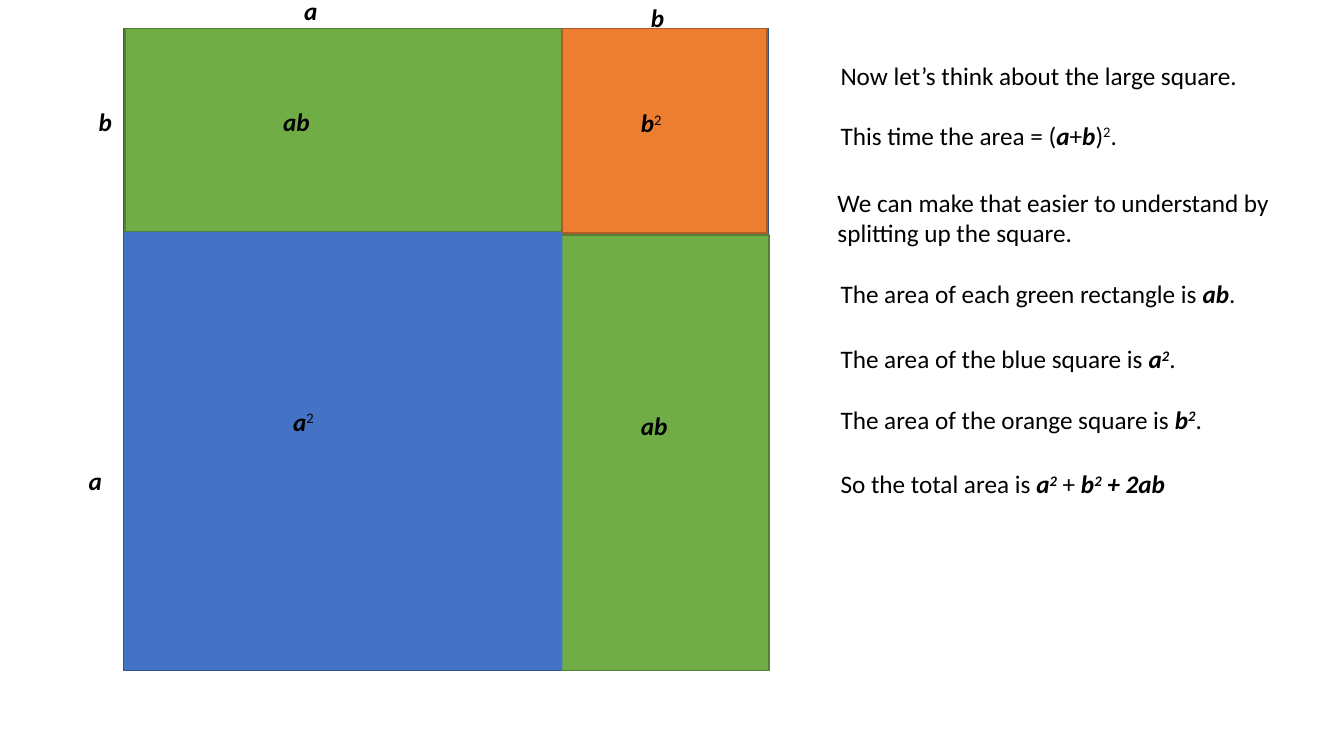
"""Build a slide that splits the square of side a + b into four parts."""
from pptx import Presentation
from pptx.dml.color import RGBColor
from pptx.enum.shapes import MSO_SHAPE
from pptx.util import Pt

BLACK = RGBColor(0x00, 0x00, 0x00)
BLUE = RGBColor(0x44, 0x72, 0xC4)
DARK_BLUE = RGBColor(0x32, 0x54, 0x91)
GREEN = RGBColor(0x70, 0xAD, 0x47)
DARK_GREEN = RGBColor(0x53, 0x80, 0x35)
ORANGE = RGBColor(0xED, 0x7D, 0x31)
DARK_ORANGE = RGBColor(0xAF, 0x5C, 0x24)

PLAIN, STRONG, POWER, STRONG_POWER = "plain", "strong", "power", "strong power"
A, B, AB = ("a", STRONG), ("b", STRONG), ("ab", STRONG)
SQUARED, STRONG_SQUARED = ("2", POWER), ("2", STRONG_POWER)
STOP = (".", PLAIN)

AREAS = [
    (88.6, 20.2, 460.4, 458.6, BLUE, DARK_BLUE),
    (89.3, 20.2, 311.8, 145.4, GREEN, DARK_GREEN),
    (401, 167.8, 148.3, 311, GREEN, DARK_GREEN),
    (401.8, 20.2, 146.2, 146.2, ORANGE, DARK_ORANGE),
    (88.6, 165.6, 313.2, 312.5, BLUE, None),
]

SIDE_WIDTH, AREA_WIDTH, SENTENCE_WIDTH = 50.4, 90, 345
SIDE_LABELS = [
    (210.2, -7.2, [A]),
    (457.9, -2.2, [B]),
    (63.4, 72.7, [B]),
    (56.2, 329, [A]),
]
AREA_LABELS = [
    (195.1, 72.7, [AB]),
    (450.7, 289.4, [AB]),
    (450.7, 73.4, [B, SQUARED]),
    (202.3, 286.6, [A, SQUARED]),
]
SENTENCES = [
    (593.3, 39.6, [("Now let’s think about the large square.", PLAIN)]),
    (593.3, 82.1, [("This time the area = (", PLAIN), A, ("+", PLAIN), B,
                   (")", PLAIN), SQUARED, STOP]),
    (591.1, 130.3, [("We can make that easier to understand by "
                     "splitting up the square.", PLAIN)]),
    (593.3, 195.1, [("The area of each green rectangle is ", PLAIN), AB, STOP]),
    (593.3, 241.9, [("The area of the blue square is ", PLAIN), A,
                    STRONG_SQUARED, STOP]),
    (593.3, 285.1, [("The area of the orange square is ", PLAIN), B,
                    STRONG_SQUARED, STOP]),
    (593.3, 331.2, [("So the total area is ", PLAIN), A, STRONG_SQUARED,
                    (" + ", PLAIN), B, STRONG_SQUARED, (" + 2ab", STRONG)]),
]


def add_area(page, left, top, width, height, fill, outline):
    area = page.shapes.add_shape(
        MSO_SHAPE.RECTANGLE, Pt(left), Pt(top), Pt(width), Pt(height))
    area.shadow.inherit = False
    area.fill.solid()
    area.fill.fore_color.rgb = fill
    if outline is None:
        area.line.fill.background()
    else:
        area.line.color.rgb = outline
        area.line.width = Pt(1)


def add_text(page, left, top, width, pieces):
    box = page.shapes.add_textbox(Pt(left), Pt(top), Pt(width), Pt(29))
    box.text_frame.word_wrap = True
    para = box.text_frame.paragraphs[0]
    for words, style in pieces:
        span = para.add_run()
        span.text = words
        span.font.name = "Calibri"
        span.font.size = Pt(18)
        span.font.color.rgb = BLACK
        span.font.bold = span.font.italic = style in (STRONG, STRONG_POWER)
        if style in (POWER, STRONG_POWER):
            span.font._element.set("baseline", "30000")


def main():
    deck = Presentation()
    deck.slide_width, deck.slide_height = Pt(960), Pt(540)
    page = deck.slides.add_slide(deck.slide_layouts[6])
    for area in AREAS:
        add_area(page, *area)
    for width, texts in ((SIDE_WIDTH, SIDE_LABELS), (AREA_WIDTH, AREA_LABELS),
                         (SENTENCE_WIDTH, SENTENCES)):
        for left, top, pieces in texts:
            add_text(page, left, top, width, pieces)
    deck.save("out.pptx")


if __name__ == "__main__":
    main()
